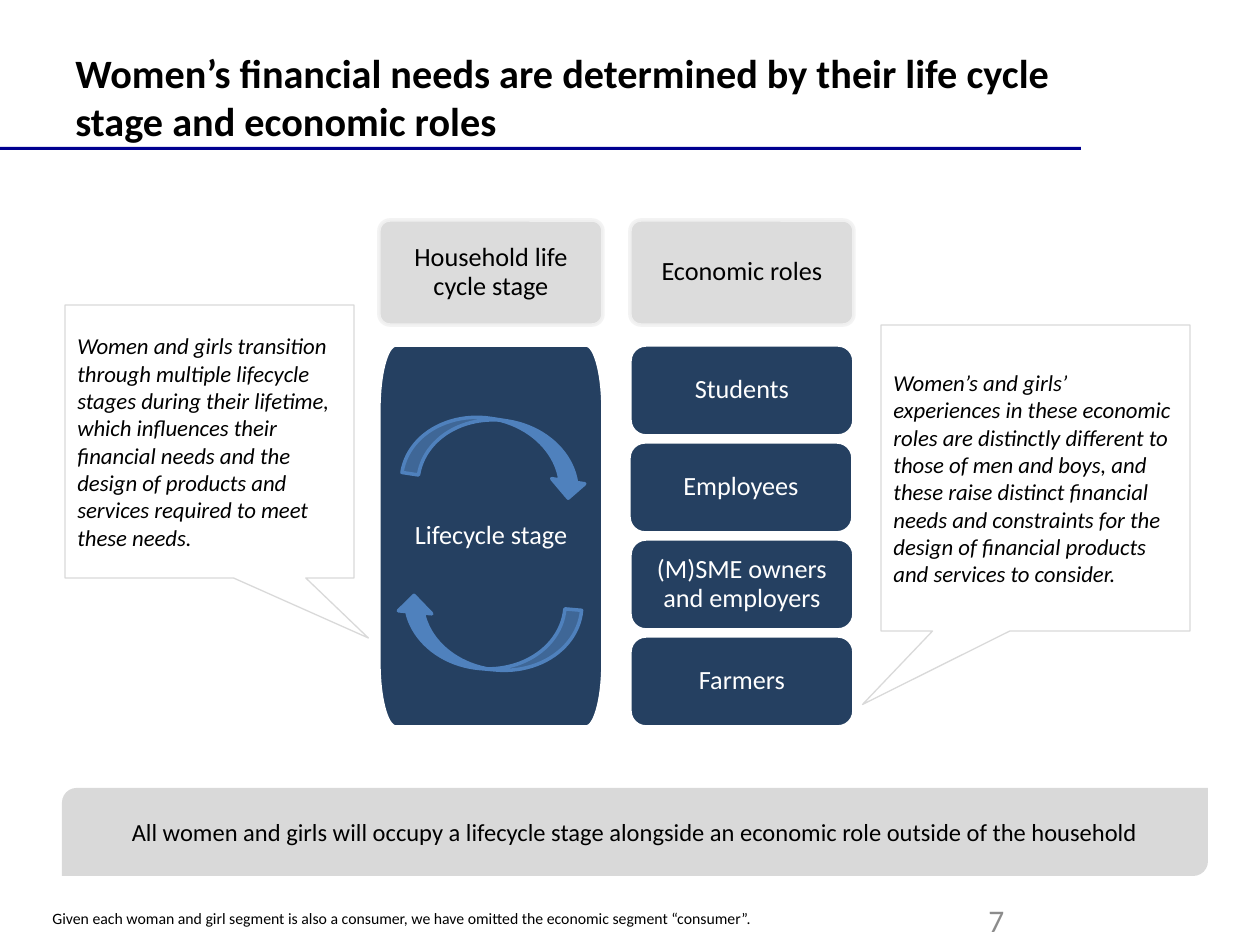
from math import cos, radians, sin

from lxml.etree import SubElement
from pptx import Presentation
from pptx.dml.color import RGBColor
from pptx.enum.shapes import MSO_SHAPE as SHAPE
from pptx.enum.text import MSO_ANCHOR as ANCHOR, PP_ALIGN as ALIGN
from pptx.oxml.ns import qn
from pptx.util import Pt

SCALE = 914400 / 126
BLACK = RGBColor(0x00, 0x00, 0x00)
WHITE = RGBColor(0xFF, 0xFF, 0xFF)
NAVY = RGBColor(0x25, 0x40, 0x61)
RULE_BLUE = RGBColor(0x00, 0x00, 0x90)
ARROW_BLUE = RGBColor(0x4F, 0x81, 0xBD)
GREY = RGBColor(0xD9, 0xD9, 0xD9)
PALE_GREY = RGBColor(0xF2, 0xF2, 0xF2)
NUMBER_GREY = RGBColor(0x8C, 0x8C, 0x8C)

COLUMN_WIDTH = 224
STAGE_LEFT, ROLE_LEFT = 379, 630
HEADER_TOP, HEADER_HEIGHT = 220, 105
BODY_TOP, BODY_HEIGHT = 345, 382
ROLE_HEIGHT, ROLE_PITCH = 91, 97
ROLES = ["Students", "Employees", "(M)SME owners and employers", "Farmers"]


def emu(*lengths):
    return [round(length * SCALE) for length in lengths]


def set_text(shape, text, size, color=BLACK, bold=False, italic=False,
             align=ALIGN.LEFT, anchor=ANCHOR.MIDDLE, spacing=None, inset=None):
    frame = shape.text_frame
    frame.word_wrap = True
    frame.vertical_anchor = anchor
    if inset is not None:
        margin, = emu(inset)
        frame.margin_left = frame.margin_right = margin
        frame.margin_top = frame.margin_bottom = margin
    para = frame.paragraphs[0]
    para.alignment = align
    para.line_spacing = spacing
    span = para.add_run()
    span.text = text
    font = span.font
    font.name, font.size = "Calibri", Pt(size)
    font.bold, font.italic = bold, italic
    font.color.rgb = color


def paint(shape, fill, line=None, width=2):
    shape.shadow.inherit = False
    shape.fill.solid()
    shape.fill.fore_color.rgb = fill
    if line is None:
        shape.line.fill.background()
    else:
        shape.line.color.rgb = line
        shape.line.width = Pt(width)


def add_preset(page, kind, left, top, width, height, fill, line=None, line_width=2):
    shape = page.shapes.add_shape(kind, *emu(left, top, width, height))
    paint(shape, fill, line, line_width)
    return shape


def add_label(page, text, left, top, width, height, **style):
    box = page.shapes.add_textbox(*emu(left, top, width, height))
    set_text(box, text, anchor=ANCHOR.TOP, **style)


def add_card(page, text, left, top, height, radius, fill, line, color, inset):
    card = add_preset(page, SHAPE.ROUNDED_RECTANGLE, left, top,
                      COLUMN_WIDTH, height, fill, line)
    card.adjustments[0] = radius / height
    set_text(card, text, 15, color, align=ALIGN.CENTER, spacing=0.9, inset=inset)
    return card


def add_header(page, text, left):
    card = add_card(page, text, left, HEADER_TOP, HEADER_HEIGHT, 11,
                    GREY, PALE_GREY, BLACK, 10)
    for color in card.element.spPr.iter(qn("a:srgbClr")):
        SubElement(color, qn("a:alpha"), val="90000")


def add_stage_panel(page):
    """Draw the tall panel, whose corners are quarter ellipses."""
    radius_x, radius_y = 17, 64
    right, bottom = STAGE_LEFT + COLUMN_WIDTH, BODY_TOP + BODY_HEIGHT
    corners = [
        (right - radius_x, bottom - radius_y, 0),
        (STAGE_LEFT + radius_x, bottom - radius_y, 90),
        (STAGE_LEFT + radius_x, BODY_TOP + radius_y, 180),
        (right - radius_x, BODY_TOP + radius_y, 270),
    ]
    points = [
        tuple(emu(x + radius_x * cos(radians(start + step)),
                  y + radius_y * sin(radians(start + step))))
        for x, y, start in corners for step in range(0, 91, 6)
    ]
    builder = page.shapes.build_freeform(*points[0])
    builder.add_line_segments(points[1:], close=True)
    panel = builder.convert_to_shape()
    paint(panel, NAVY, WHITE)
    set_text(panel, "Lifecycle stage", 15, WHITE, align=ALIGN.CENTER,
             spacing=0.9, inset=11)


def add_cycle_arrow(page, left, top, rotation):
    arrow = add_preset(page, SHAPE.CURVED_DOWN_ARROW, left, top, 185, 67,
                       ARROW_BLUE, ARROW_BLUE)
    arrow.rotation = rotation


def add_callout(page, text, left, top, width, height, tip):
    callout = add_preset(page, SHAPE.RECTANGULAR_CALLOUT, left, top, width, height,
                         WHITE, GREY, 0.75)
    callout.adjustments[0], callout.adjustments[1] = tip
    set_text(callout, text, 13, italic=True)


def main():
    deck = Presentation()
    deck.slide_width, deck.slide_height = emu(1260, 945)
    page = deck.slides.add_slide(deck.slide_layouts[6])

    add_preset(page, SHAPE.RECTANGLE, 0, 147, 1081, 3, RULE_BLUE)
    add_label(page, "Women’s financial needs are determined by their life cycle "
              "stage and economic roles", 63, 42, 1018, 84, size=23, bold=True)

    add_header(page, "Household life cycle stage", STAGE_LEFT)
    add_header(page, "Economic roles", ROLE_LEFT)
    add_stage_panel(page)
    add_cycle_arrow(page, 406, 420, 8.8)
    add_cycle_arrow(page, 394, 602, 185.1)
    for index, role in enumerate(ROLES):
        left = ROLE_LEFT - 1 if role == "Employees" else ROLE_LEFT
        add_card(page, role, left, BODY_TOP + index * ROLE_PITCH, ROLE_HEIGHT, 16,
                 NAVY, WHITE, WHITE, 11)

    add_callout(page, "Women and girls transition through multiple lifecycle stages "
                "during their lifetime, which influences their financial needs and "
                "the design of products and services required to meet these needs.",
                65, 305, 289, 273, (0.55, 0.72))
    add_callout(page, "Women’s and girls’ experiences in these economic roles are "
                "distinctly different to those of men and boys, and these raise "
                "distinct financial needs and constraints for the design of "
                "financial products and services to consider.",
                881, 325, 309, 306, (-0.56, 0.74))

    banner = add_preset(page, SHAPE.ROUND_2_DIAG_RECTANGLE, 62, 788, 1146, 88, GREY)
    set_text(banner, "All women and girls will occupy a lifecycle stage alongside an "
             "economic role outside of the household", 14, align=ALIGN.CENTER)
    add_label(page, "Given each woman and girl segment is also a consumer, we have "
              "omitted the economic segment “consumer”.", 40, 903, 1115, 38, size=9)
    add_label(page, "7", 976, 895, 284, 50, size=18, color=NUMBER_GREY)

    deck.save("out.pptx")


if __name__ == "__main__":
    main()
